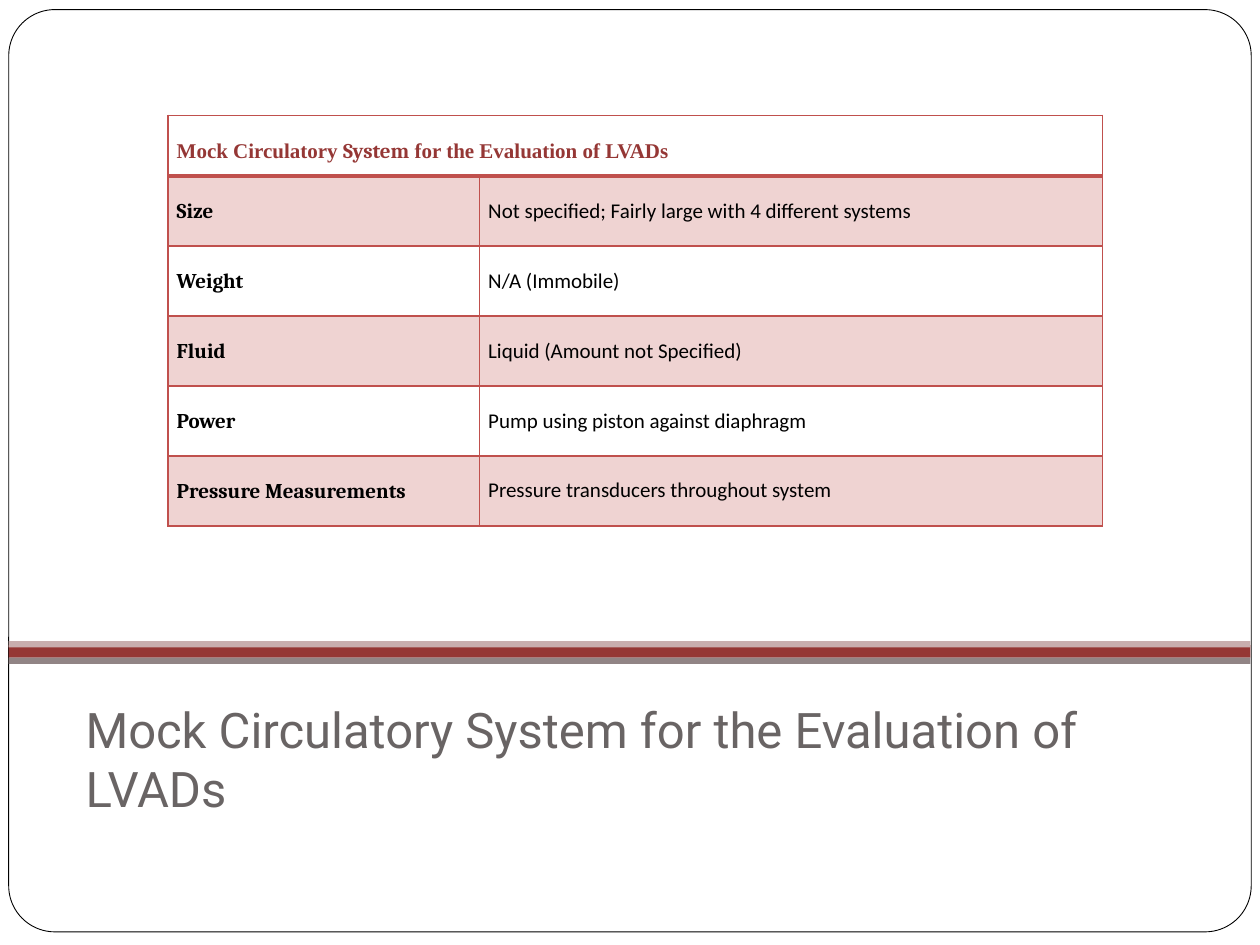
from lxml.etree import SubElement
from pptx import Presentation
from pptx.dml.color import RGBColor
from pptx.enum.shapes import MSO_SHAPE
from pptx.enum.text import MSO_ANCHOR
from pptx.oxml.ns import qn
from pptx.util import Pt

TITLE = "Mock Circulatory System for the Evaluation of LVADs"
ROWS = [
    ("Size", "Not specified; Fairly large with 4 different systems"),
    ("Weight", "N/A (Immobile)"),
    ("Fluid", "Liquid (Amount not Specified)"),
    ("Power", "Pump using piston against diaphragm"),
    ("Pressure Measurements", "Pressure transducers throughout system"),
]


def color(value):
    return RGBColor.from_string(value)


def apply(target, values):
    for name, value in values.items():
        setattr(target, name, value)


class Deck:
    dark, edge, band = "953735", "C0504D", "EFD3D2"
    black, white, gray = "000000", "FFFFFF", "696464"

    def __init__(self, s):
        self.s = s

    def shape(self, kind, box, fill, line=None):
        sp = self.s.shapes.add_shape(kind, *map(Pt, box))
        sp.shadow.inherit = False
        sp.fill.solid()
        sp.fill.fore_color.rgb = color(fill)
        if line:
            sp.line.color.rgb = color(line)
            sp.line.width = Pt(0.5)
        else:
            sp.line.fill.background()
        return sp

    def run(self, p, text, font, size, ink, bold=False):
        r = p.add_run()
        r.text = text
        apply(r.font, {"name": font, "size": Pt(size), "bold": bold})
        r.font.color.rgb = color(ink)

    def title(self, box, text):
        tf = self.s.shapes.add_textbox(*map(Pt, box)).text_frame
        apply(tf, {"word_wrap": True, "vertical_anchor": MSO_ANCHOR.MIDDLE,
                   "margin_left": Pt(7.2), "margin_right": Pt(7.2),
                   "margin_top": Pt(3.6), "margin_bottom": Pt(7.2)})
        self.run(tf.paragraphs[0], text, "Roboto", 28, self.gray)

    def borders(self, cell, widths):
        pr = cell._tc.get_or_add_tcPr()
        for side in "LRTB":
            ln = SubElement(pr, qn(f"a:ln{side}"), w=str(Pt(widths.get(side, 1))))
            fill = SubElement(ln, qn("a:solidFill"))
            SubElement(fill, qn("a:srgbClr"), val=self.edge)

    def cell(self, cell, runs, widths, fill=None, spacing=None, anchor=MSO_ANCHOR.TOP):
        apply(cell, {"margin_left": Pt(5), "margin_right": Pt(5),
                     "margin_top": 0, "margin_bottom": 0, "vertical_anchor": anchor})
        self.borders(cell, widths)
        if fill:
            cell.fill.solid()
            cell.fill.fore_color.rgb = color(fill)
        else:
            cell.fill.background()
        p = cell.text_frame.paragraphs[0]
        if spacing:
            p.line_spacing = spacing
        for text, font, ink, bold in runs:
            self.run(p, text, font, 12, ink, bold)

    def table(self, box, widths, header, rows, head_height, row_height):
        tbl = self.s.shapes.add_table(len(rows) + 1, 2, *map(Pt, box)).table
        apply(tbl, {"first_row": False, "horz_banding": False})
        for col, width in zip(tbl.columns, widths):
            col.width = Pt(width)
        for i, row in enumerate(tbl.rows):
            row.height = Pt(row_height if i else head_height)
        tbl.cell(0, 0).merge(tbl.cell(0, 1))
        for j, runs in enumerate((header, [])):
            self.cell(tbl.cell(0, j), runs, {"B": 2.25}, spacing=2)
        for i, (label, value) in enumerate(rows, 1):
            fill = self.band if i % 2 else None
            edges = {"T": 2.25} if i == 1 else {}
            self.cell(tbl.cell(i, 0), [(label, "Cambria", self.black, True)],
                      edges, fill, spacing=2)
            self.cell(tbl.cell(i, 1), [(value, "Calibri", self.black, False)],
                      edges, fill, anchor=MSO_ANCHOR.MIDDLE)


def main():
    prs = Presentation()
    prs.slide_width, prs.slide_height = Pt(720), Pt(540)
    d = Deck(prs.slides.add_slide(prs.slide_layouts[6]))

    frame = d.shape(MSO_SHAPE.ROUNDED_RECTANGLE, (5, 5.5, 710, 527), d.white, d.black)
    frame.adjustments[0] = 0.05
    for top, height, fill in ((368.7, 7.2, d.dark), (366.4, 3.6, "C8AEAE"),
                              (375.8, 3.6, "918485")):
        d.shape(MSO_SHAPE.RECTANGLE, (5, top, 709.5, height), fill)

    d.title((41.8, 414.7, 648, 41), TITLE)
    header = [("Mock Circulatory ", "Times New Roman", d.dark, True),
              ("System", "Cambria", d.dark, True),
              (" for the Evaluation of LVADs", "Times New Roman", d.dark, True)]
    d.table((96, 66, 534, 234.5), (178, 356), header, ROWS, 34.5, 40)
    prs.save("out.pptx")


if __name__ == "__main__":
    main()
